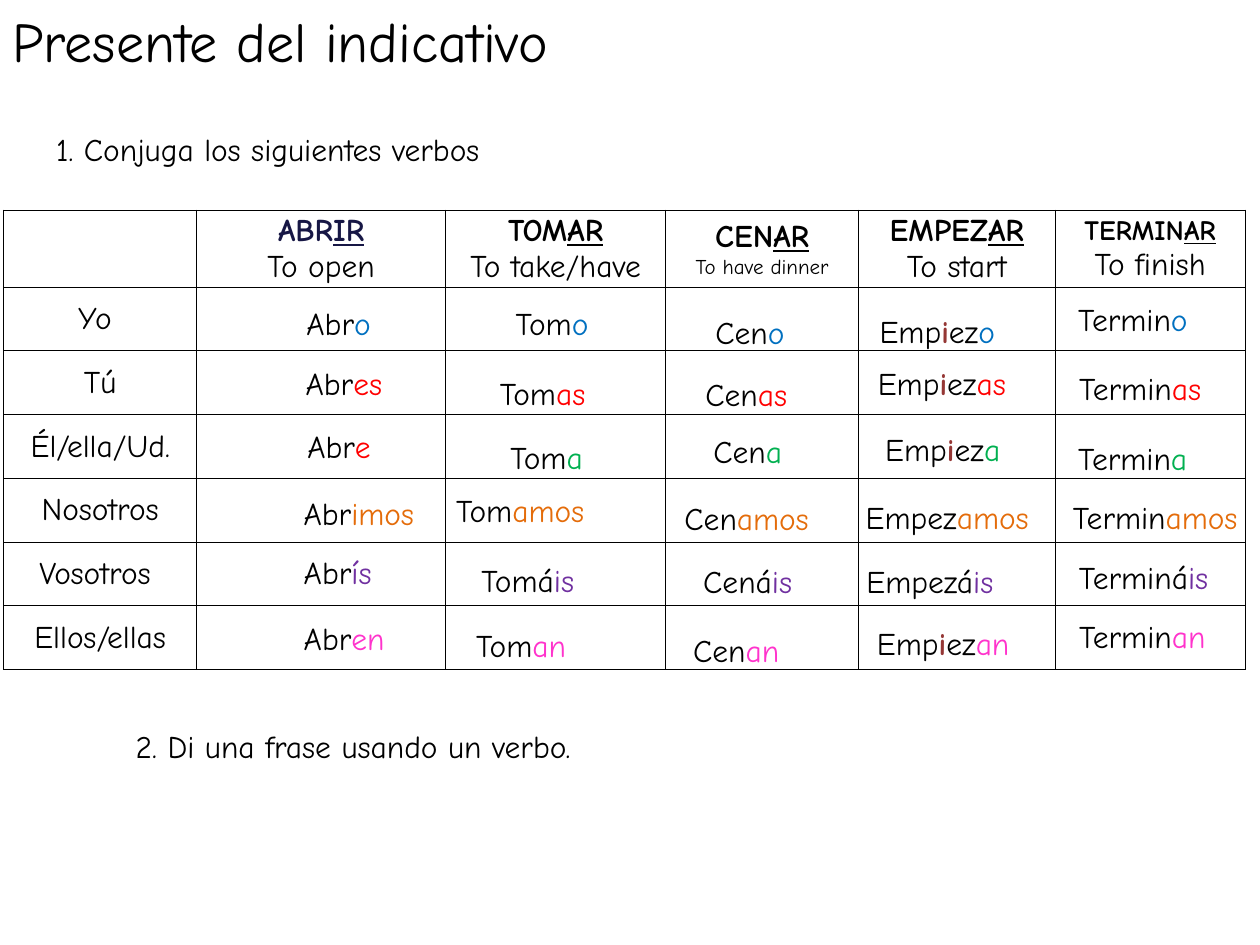
from lxml.etree import SubElement
from pptx import Presentation
from pptx.dml.color import RGBColor
from pptx.enum.text import MSO_ANCHOR, MSO_AUTO_SIZE, PP_ALIGN
from pptx.oxml.ns import qn
from pptx.util import Pt

COLORS = {
    "black": "000000", "navy": "171745", "stem change": "953735",
    "blue": "0070C0", "red": "FF0000", "green": "00B050",
    "orange": "E46C0A", "purple": "7030A0", "pink": "FF33CC",
}
PRONOUNS = ["Yo ", "Tú", "Él/ella/Ud.", "Nosotros", "Vosotros ", "Ellos/ellas"]
ENDING_COLORS = ["blue", "red", "green", "orange", "purple", "pink"]
COLUMN_WIDTHS = [110.5, 142, 126, 110, 112.5, 108.5]
HEADER_HEIGHT, ROW_HEIGHT = 44, 36.45

# stem, ending, size, colour, meaning, meaning size
HEADERS = [
    ("ABR", "IR", 18, "navy", "To open", 18),
    ("TOM", "AR", 18, "black", "To take/have", 18),
    ("CEN", "AR", 18, "black", "To have dinner", 12),
    ("EMPEZ", "AR", 18, "black", "To start", 18),
    ("TERMIN", "AR", 16, "black", "To finish", 18),
]
# One list per verb, one entry per pronoun: stem, ending, left, top, width.
# Bars in a stem enclose the vowel that changes.
VERBS = [
    [("Abr", "o", 168, 170, 57), ("Abr", "es", 161, 204.5, 71),
     ("Abr", "e", 168.5, 240.5, 63), ("Abr", "imos", 162.5, 278.5, 85),
     ("Abr", "ís", 166.5, 312.5, 66), ("Abr", "en", 166.5, 350, 67)],
    [("Tom", "o", 287.5, 170, 65.5), ("Tom", "as", 278.5, 210, 74),
     ("Tom", "a", 284.5, 247, 65.5), ("Tom", "amos", 253.5, 277, 98),
     ("Tomá", "is", 268, 317, 79), ("Tom", "an", 265, 354, 75)],
    [("Cen", "o", 398.5, 175.5, 60), ("Cen", "as", 396, 211, 68.5),
     ("Cen", "a", 400.5, 243.5, 60), ("Cen", "amos", 384, 281.5, 87),
     ("Cená", "is", 390.5, 317.5, 73.5), ("Cen", "an", 389, 357, 64)],
    [("Emp|i|ez", "o", 495.5, 175, 89.5), ("Emp|i|ez", "as", 494.5, 204.5, 98),
     ("Emp|i|ez", "a", 494, 242, 89.5), ("Empez", "amos", 483, 281, 116.5),
     ("Empezá", "is", 488, 317.5, 98), ("Emp|i|ez", "an", 494, 353, 98.5)],
    [("Termin", "o", 609, 168, 89.5), ("Termin", "as", 609.5, 207.5, 98),
     ("Termin", "a", 609, 247.5, 89.5), ("Termin", "amos", 606, 281, 121.5),
     ("Terminá", "is", 609.5, 315.5, 103), ("Termin", "an", 609.5, 349, 98.5)],
]
# Verb and pronoun positions of the forms centred in their boxes
CENTERED = {(0, 1), (0, 3), (2, 0), (2, 4), (3, 2), (3, 3)}


class SlideBuilder:
    font_name = "Comic Neue"

    def __init__(self, slide):
        self.slide = slide

    def fill_paragraph(self, paragraph, runs, size=18, align=PP_ALIGN.LEFT):
        """Add runs given as (text, colour name, bold, underline)."""
        paragraph.alignment = align
        paragraph.font.name = self.font_name
        paragraph.font.size = Pt(size)
        for text, color, bold, underline in runs:
            run = paragraph.add_run()
            run.text = text
            run.font.name = self.font_name
            run.font.size = Pt(size)
            run.font.color.rgb = RGBColor.from_string(COLORS[color])
            run.font.bold = bold
            run.font.underline = underline

    def text(self, runs, left, top, width, height=29, size=18,
             align=PP_ALIGN.LEFT, wrap=False):
        box = self.slide.shapes.add_textbox(Pt(left), Pt(top), Pt(width), Pt(height))
        frame = box.text_frame
        frame.word_wrap = wrap
        frame.auto_size = MSO_AUTO_SIZE.SHAPE_TO_FIT_TEXT
        self.fill_paragraph(frame.paragraphs[0], runs, size, align)

    def line(self, text, *place, **options):
        self.text([(text, "black", False, False)], *place, **options)

    def verb_form(self, stem, ending, color, *place, align):
        runs = [(part, "stem change" if index % 2 else "black", bool(index % 2), False)
                for index, part in enumerate(stem.split("|"))]
        self.text(runs + [(ending, color, False, False)], *place, align=align)

    def style_cell(self, cell):
        cell.fill.background()
        cell.vertical_anchor = MSO_ANCHOR.MIDDLE
        cell.margin_left = cell.margin_right = cell.margin_top = Pt(0.7)
        cell.margin_bottom = Pt(0)
        properties = cell._tc.get_or_add_tcPr()
        for index, side in enumerate(("lnL", "lnR", "lnT", "lnB")):
            border = properties.makeelement(qn(f"a:{side}"), {"w": str(Pt(0.5))})
            fill = SubElement(border, qn("a:solidFill"))
            SubElement(fill, qn("a:srgbClr"), val=COLORS["black"])
            properties.insert(index, border)

    def table(self, left, top):
        rows = len(PRONOUNS) + 1
        height = HEADER_HEIGHT + ROW_HEIGHT * len(PRONOUNS)
        table = self.slide.shapes.add_table(
            rows, len(COLUMN_WIDTHS), Pt(left), Pt(top),
            Pt(sum(COLUMN_WIDTHS)), Pt(height)).table
        table.first_row = table.horz_banding = False
        for column, width in zip(table.columns, COLUMN_WIDTHS):
            column.width = Pt(width)
        for index, row in enumerate(table.rows):
            row.height = Pt(ROW_HEIGHT if index else HEADER_HEIGHT)
        for cell in table.iter_cells():
            self.style_cell(cell)
        for column, header in enumerate(HEADERS, 1):
            stem, ending, size, color, meaning, meaning_size = header
            frame = table.cell(0, column).text_frame
            self.fill_paragraph(frame.paragraphs[0],
                                [(stem, color, True, False), (ending, color, True, True)],
                                size, PP_ALIGN.CENTER)
            self.fill_paragraph(frame.add_paragraph(),
                                [(meaning, "black", False, False)],
                                meaning_size, PP_ALIGN.CENTER)
        for row, pronoun in enumerate(PRONOUNS, 1):
            self.fill_paragraph(table.cell(row, 0).text_frame.paragraphs[0],
                                [(pronoun, "black", False, False)],
                                align=PP_ALIGN.CENTER)


def main():
    presentation = Presentation()
    presentation.slide_width, presentation.slide_height = Pt(720), Pt(540)
    builder = SlideBuilder(presentation.slides.add_slide(presentation.slide_layouts[6]))

    builder.line("Presente del indicativo", 0, 0, 357, 46, size=32)
    builder.table(2, 120)
    for verb, forms in enumerate(VERBS):
        for person, (stem, ending, *place) in enumerate(forms):
            position = (verb, person)
            color = "red" if position == (0, 2) else ENDING_COLORS[person]
            align = PP_ALIGN.CENTER if position in CENTERED else PP_ALIGN.LEFT
            builder.verb_form(stem, ending, color, *place, align=align)
    builder.line("2. Di una frase usando un verbo.", 70.5, 412, 628, wrap=True)
    builder.line("1. Conjuga los siguientes verbos", 25, 71, 279.5)
    presentation.save("out.pptx")


if __name__ == "__main__":
    main()
